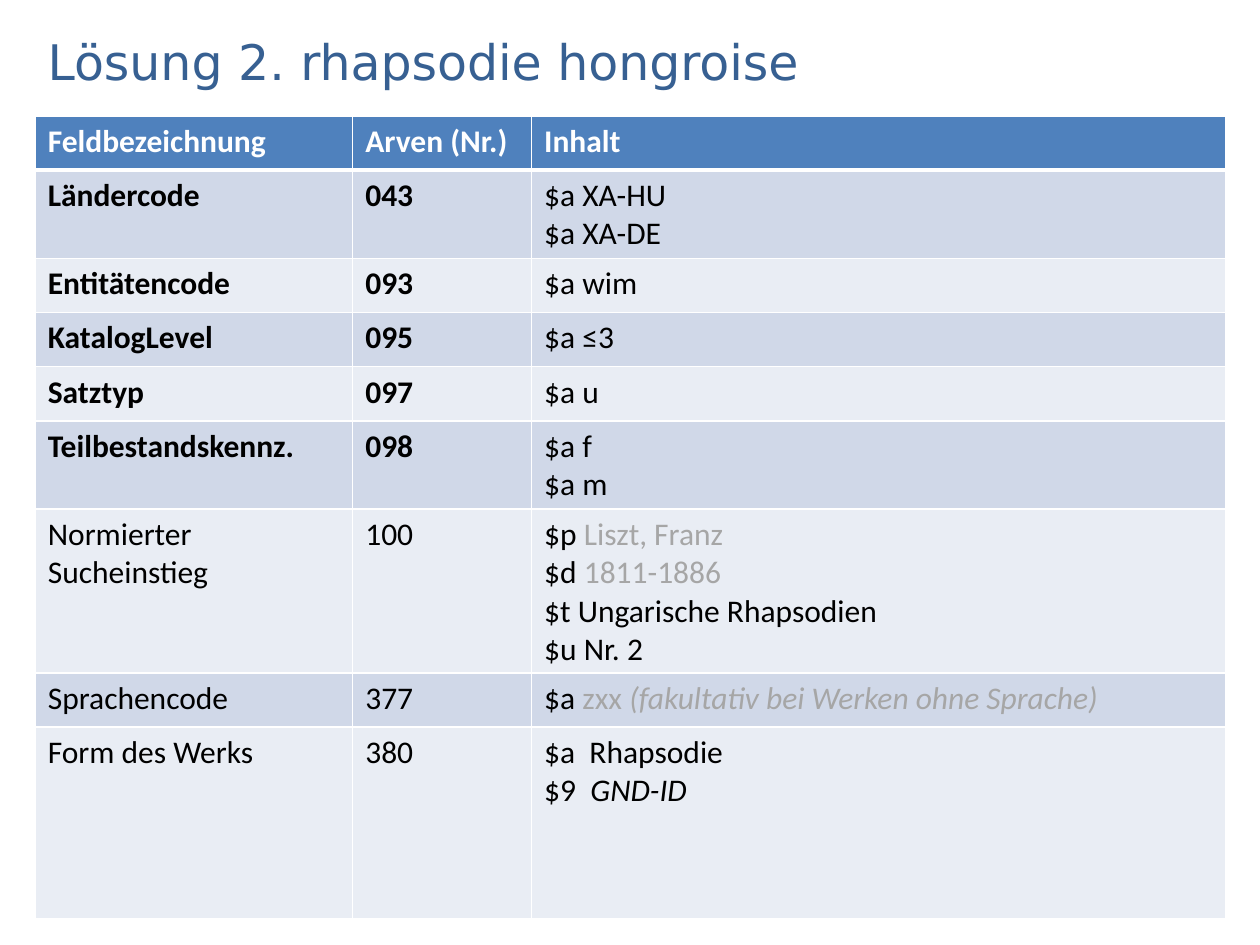
import pptx
import pptx.dml.color
import pptx.enum.text
import pptx.oxml
import pptx.oxml.ns
import pptx.util
from pptx.util import Inches

WHITE, BLACK, GREY = "FFFFFF", "000000", "A6A6A6"
TITLE_BLUE, HEADER_BLUE = "376092", "4F81BD"
BANDS = ("D0D8E8", "E9EDF4")

LEFT = 0.28
COLUMN_WIDTHS = (2.52, 1.42, 5.51)
HEADER = ("Feldbezeichnung", "Arven (Nr.)", "Inhalt")

# Label lines, field number, content lines, row height, bold label.
# A content line is a list of spans: (text, format values).
FIELDS = [
    (["Ländercode"], "043", [[("$a XA-HU", {})], [("$a XA-DE", {})]], 0.68, True),
    (["Entitätencode"], "093", [[("$a wim", {})]], 0.43, True),
    (["KatalogLevel"], "095", [[("$a ≤3", {})]], 0.43, True),
    (["Satztyp"], "097", [[("$a u", {})]], 0.43, True),
    (["Teilbestandskennz."], "098", [[("$a f", {})], [("$a m", {})]], 0.68, True),
    (["Normierter", "Sucheinstieg"], "100", [
        [("$p ", {}), ("Liszt, Franz", {"color": GREY})],
        [("$d ", {}), ("1811-1886", {"color": GREY})],
        [("$t Ungarische Rhapsodien", {})],
        [("$u Nr. 2", {})],
    ], 1.26, False),
    (["Sprachencode"], "377", [
        [("$a ", {}), ("zxx ", {"color": GREY}),
         ("(fakultativ bei Werken ohne Sprache)", {"color": GREY, "italic": True})],
    ], 0.43, False),
    (["Form des Werks"], "380", [
        [("$a  Rhapsodie", {})],
        [("$9  ", {}), ("GND-ID", {"italic": True})],
    ], 1.52, False),
]


def rgb(code):
    return pptx.dml.color.RGBColor.from_string(code)


def plain(*lines):
    """Turn simple text lines into lines of one unformatted span each."""
    return [[(line, {})] for line in lines]


class SlideBuilder:
    text_style = {"name": "Calibri", "size": pptx.util.Pt(18),
                  "bold": False, "italic": False, "color": BLACK}

    def __init__(self, deck):
        self.slide = deck.slides.add_slide(deck.slide_layouts[6])

    def add_text(self, frame, lines, **style):
        for index, spans in enumerate(lines):
            para = frame.paragraphs[0] if index == 0 else frame.add_paragraph()
            for text, changes in spans:
                span = para.add_run()
                span.text = text
                values = {**self.text_style, **style, **changes}
                span.font.color.rgb = rgb(values.pop("color"))
                for name, value in values.items():
                    setattr(span.font, name, value)

    def title(self, text, left, top, width, height):
        box = self.slide.shapes.add_textbox(
            Inches(left), Inches(top), Inches(width), Inches(height))
        frame = box.text_frame
        frame.word_wrap = True
        frame.vertical_anchor = pptx.enum.text.MSO_ANCHOR.MIDDLE
        self.add_text(frame, plain(text), name="DejaVu Sans",
                      size=pptx.util.Pt(28), color=TITLE_BLUE)

    def table(self, left, top, widths, heights):
        frame = self.slide.shapes.add_table(
            len(heights), len(widths), Inches(left), Inches(top),
            Inches(sum(widths)), Inches(sum(heights)))
        table = frame.table
        table.first_row = table.horz_banding = False
        for column, width in zip(table.columns, widths):
            column.width = Inches(width)
        for row, height in zip(table.rows, heights):
            row.height = Inches(height)
        return table

    def cell(self, cell, lines, fill, borders, **style):
        # Border lines have to stand before the fill in the cell properties
        properties = cell._tc.get_or_add_tcPr()
        for side, points in borders.items():
            properties.append(pptx.oxml.parse_xml(
                f'<a:ln{side} {pptx.oxml.ns.nsdecls("a")} w="{int(pptx.util.Pt(points))}">'
                f'<a:solidFill><a:srgbClr val="{WHITE}"/></a:solidFill></a:ln{side}>'))
        cell.fill.solid()
        cell.fill.fore_color.rgb = rgb(fill)
        self.add_text(cell.text_frame, lines, **style)


def main():
    deck = pptx.Presentation()
    deck.slide_width, deck.slide_height = Inches(10), Inches(7.5)
    builder = SlideBuilder(deck)

    # Title
    builder.title("Lösung 2. rhapsodie hongroise", LEFT, 0.2, sum(COLUMN_WIDTHS), 0.56)

    # Table with its header row
    heights = [0.43] + [field[3] for field in FIELDS]
    table = builder.table(LEFT, 0.92, COLUMN_WIDTHS, heights)
    thin = {"L": 1, "R": 1, "T": 1, "B": 1}
    for column, text in enumerate(HEADER):
        builder.cell(table.cell(0, column), plain(text), HEADER_BLUE,
                     {**thin, "B": 3}, bold=True, color=WHITE)

    # Field rows in alternating bands
    for row, (label, number, content, _, bold) in enumerate(FIELDS, start=1):
        borders = {**thin, "T": 3 if row == 1 else 1}
        columns = ((plain(*label), bold), (plain(number), bold), (content, False))
        for column, (lines, heavy) in enumerate(columns):
            builder.cell(table.cell(row, column), lines, BANDS[(row - 1) % 2],
                         borders, bold=heavy)

    deck.save("out.pptx")


if __name__ == "__main__":
    main()
